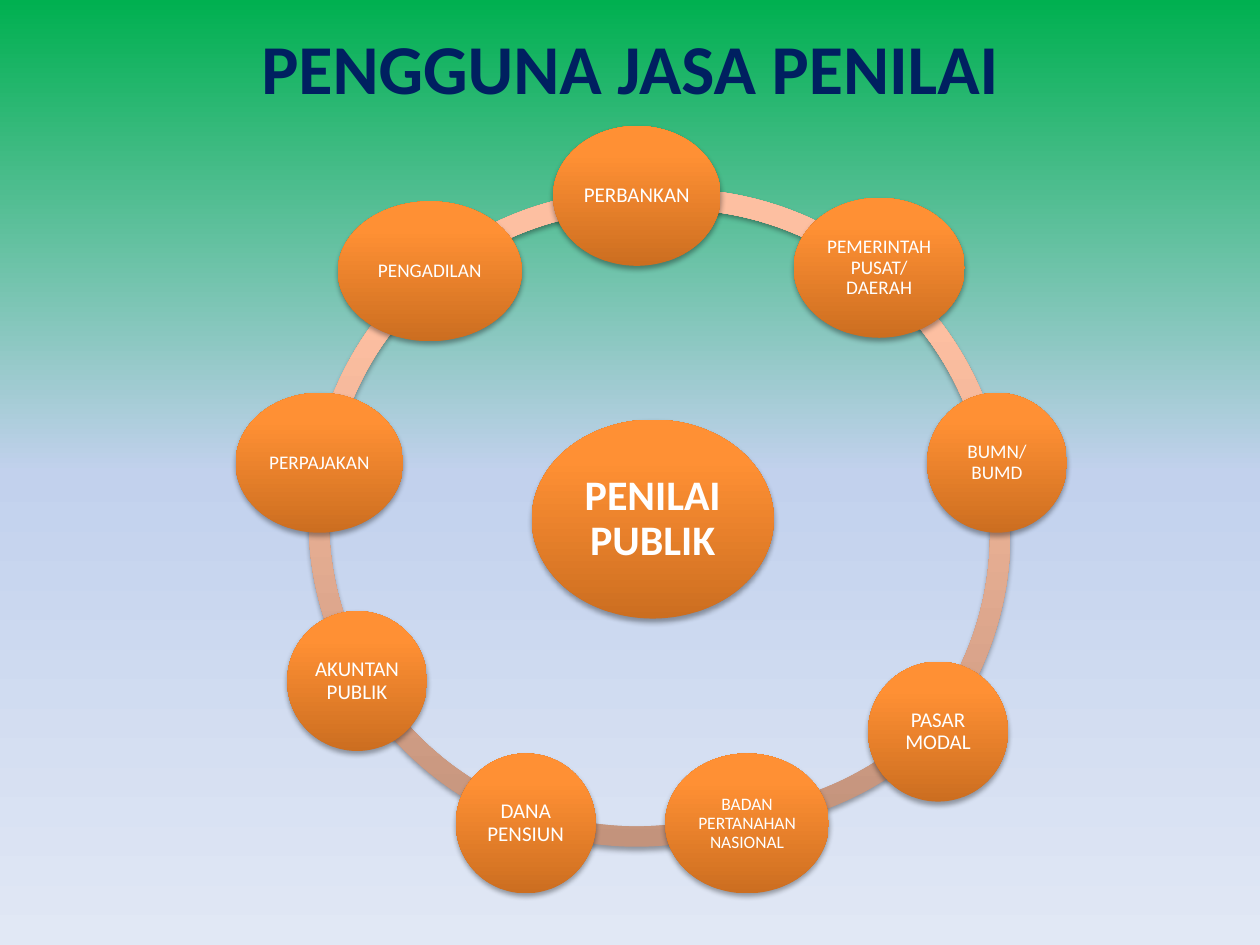
from lxml import etree
from pptx import Presentation
from pptx.dml.color import RGBColor
from pptx.enum.shapes import MSO_SHAPE
from pptx.enum.text import MSO_ANCHOR, PP_ALIGN
from pptx.oxml.ns import qn
from pptx.util import Cm, Pt

ELLIPSE, ARC = MSO_SHAPE.OVAL, MSO_SHAPE.BLOCK_ARC
MIDDLE, CENTER = MSO_ANCHOR.MIDDLE, PP_ALIGN.CENTER

COLORS = {"title": "002060", "text": "FFFFFF", "shadow": "000000"}
GRADIENTS = {
    "background": [(0, "00B050"), (50, "C2D1ED"), (100, "E1E8F5")],
    "ring": [(0, "C3937C"), (80, "FDBFA1"), (100, "FFBFA1")],
    "node": [(0, "CC6E20"), (80, "FF9034"), (100, "FF9136")],
}
SHADOW = {"blurRad": Pt(3.1), "dist": Pt(1.8), "dir": 90 * 60000,
          "algn": "ctr", "rotWithShape": 0}


def fill_gradient(fill, name, angle):
    """Fill with the named stops; angle is counter-clockwise in degrees."""
    fill.gradient()
    fill.gradient_angle = angle
    stops = fill._xPr.find(qn("a:gradFill")).find(qn("a:gsLst"))
    stops.clear()
    for pos, color in GRADIENTS[name]:
        gs = etree.SubElement(stops, qn("a:gs"), pos=str(pos * 1000))
        etree.SubElement(gs, qn("a:srgbClr"), val=color)


def add_shaded(kind, left, top, width, height, gradient):
    """Add a borderless shape with a gradient and a soft shadow below it."""
    sp = s.shapes.add_shape(kind, Cm(left), Cm(top), Cm(width), Cm(height))
    fill_gradient(sp.fill, gradient, 90)
    sp.line.fill.background()
    sp.shadow.inherit = False
    effects = sp._element.spPr.find(qn("a:effectLst"))
    shadow = etree.SubElement(effects, qn("a:outerShdw"),
                              {k: str(v) for k, v in SHADOW.items()})
    color = etree.SubElement(shadow, qn("a:srgbClr"), val=COLORS["shadow"])
    etree.SubElement(color, qn("a:alpha"), val="35000")
    return sp


prs = Presentation()
prs.slide_width, prs.slide_height = Cm(25.4), Cm(19.05)
s = prs.slides.add_slide(prs.slide_layouts[6])
fill_gradient(s.background.fill, "background", 270)

# Ring: left, top, start and end angle (clockwise from the right)
RING_SIZE, RING_WIDTH, STEP = 13.23, 0.031, 40
arcs = [(6.22, 3.84, start, start + STEP) for start in range(230, 69, -STEP)]
arcs += [
    (7.7, 3.51, 45.28, 83.4),
    (7.14, 4.14, 347.41, 37.78),
    (7.09, 3.89, 308.27, 349.55),
    (6.99, 3.81, 263.39, 309.58),
]
for left, top, start, end in arcs:
    sp = add_shaded(ARC, left, top, RING_SIZE, RING_SIZE, "ring")
    # Angles are stored in 1/60000 degree, adjustments count 100000 as 1
    for i, value in enumerate((start * 0.6, end * 0.6, RING_WIDTH)):
        sp.adjustments[i] = value

# Nodes: text, left, top, width, height, font size, bold
NODE_H = 2.82
nodes = [
    ("PENILAI PUBLIK", 10.72, 8.46, 4.88, 4.01, 24, True),
    ("PERBANKAN", 11.15, 2.54, 3.38, NODE_H, 12, False),
    ("PEMERINTAH PUSAT/ DAERAH", 16, 3.99, 3.45, NODE_H, 11, False),
    ("BUMN/ BUMD", 18.69, 7.92, NODE_H, NODE_H, 11, False),
    ("PASAR MODAL", 17.5, 13.34, NODE_H, NODE_H, 12, False),
    ("BADAN PERTANAHAN NASIONAL", 13.41, 15.19, 3.3, NODE_H, 10, False),
    ("DANA PENSIUN", 9.19, 15.19, NODE_H, NODE_H, 12, False),
    ("AKUNTAN PUBLIK", 5.79, 12.32, NODE_H, NODE_H, 12, False),
    ("PERPAJAKAN", 4.75, 7.92, 3.38, NODE_H, 11, False),
    ("PENGADILAN", 6.81, 4.06, 3.71, NODE_H, 11, False),
]
texts = []
for text, left, top, width, height, size, bold in nodes:
    sp = add_shaded(ELLIPSE, left, top, width, height, "node")
    tf = sp.text_frame
    for side in ("left", "top", "right", "bottom"):
        setattr(tf, f"margin_{side}", Cm(0.04))
    tf.paragraphs[0].line_spacing = 0.9
    texts.append((tf, text, size, bold, "text"))

title = s.shapes.add_textbox(Cm(0), Cm(0.36), Cm(25.4), Cm(1.98))
texts.append((title.text_frame, "PENGGUNA JASA PENILAI", 40, True, "title"))

for tf, text, size, bold, color in texts:
    tf.word_wrap = True
    tf.vertical_anchor = MIDDLE
    p = tf.paragraphs[0]
    p.alignment = CENTER
    r = p.add_run()
    r.text = text
    for key, value in {"name": "Calibri", "size": Pt(size), "bold": bold}.items():
        setattr(r.font, key, value)
    r.font.color.rgb = RGBColor.from_string(COLORS[color])

prs.save("out.pptx")
